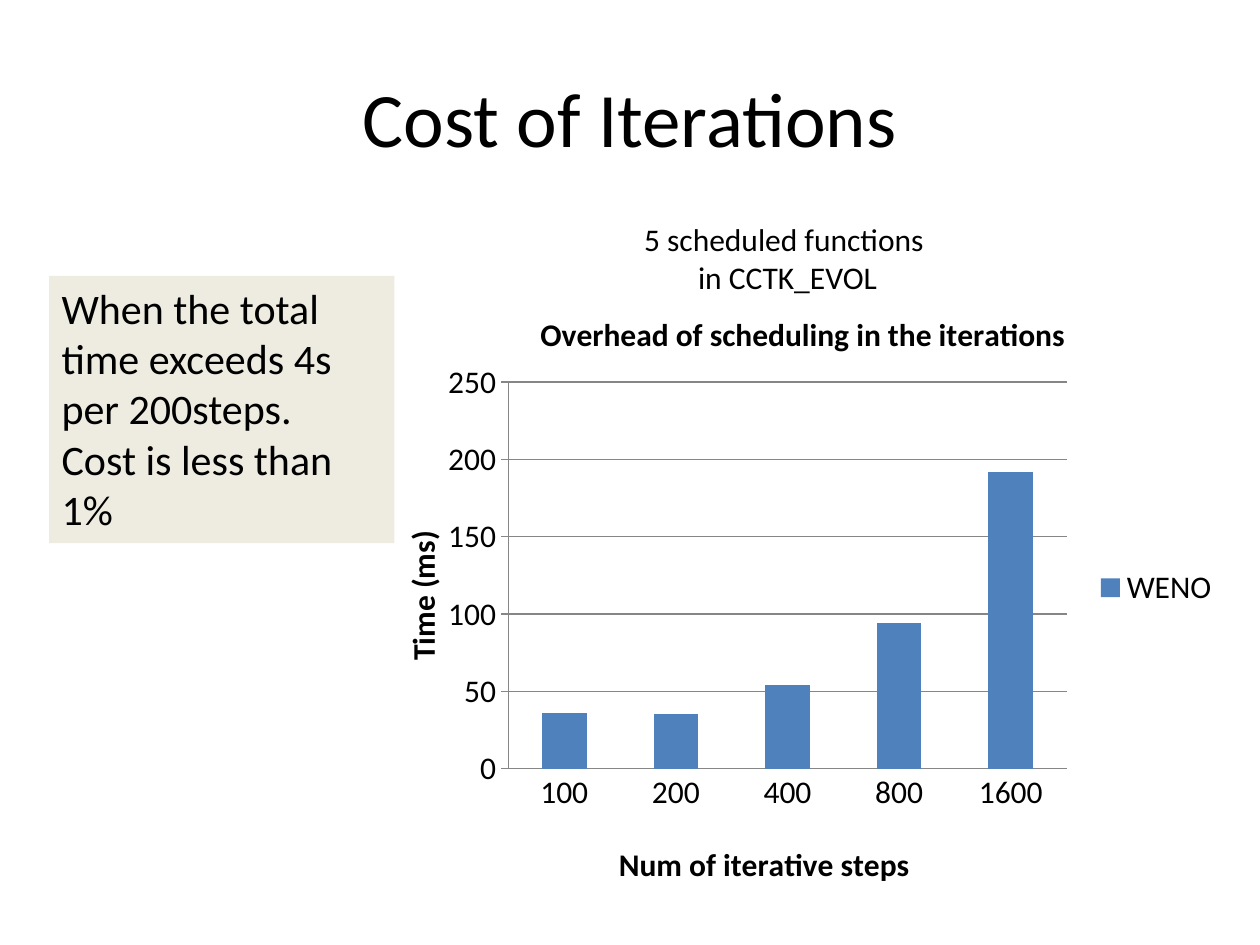
from pptx import Presentation
from pptx.chart.data import CategoryChartData
from pptx.dml.color import RGBColor
from pptx.enum import chart as ec, shapes, text
from pptx.oxml import parse_xml
from pptx.oxml.ns import nsdecls, qn
from pptx.util import Inches, Pt

BLACK = RGBColor(0, 0, 0)
BLUE = RGBColor(0x4F, 0x81, 0xBD)
BEIGE = RGBColor(0xEE, 0xEC, 0xE1)
GRAY = RGBColor(0x86, 0x86, 0x86)


def write(tf, lines, size=18, bold=False, align=None):
    for i, line in enumerate(lines):
        p = tf.paragraphs[0] if i == 0 else tf.add_paragraph()
        p.alignment = align
        r = p.add_run()
        r.text = line
        r.font.name = "Calibri"
        r.font.size = Pt(size)
        r.font.bold = bold
        r.font.color.rgb = BLACK


def place(parent, index, target="", **values):
    for old in parent.findall(qn("c:layout")):
        parent.remove(old)
    modes = "".join(f'<c:{k}Mode val="edge"/>' for k in ("x", "y"))
    sizes = "".join(f'<c:{k} val="{v}"/>' for k, v in values.items())
    parent.insert(index, parse_xml(
        f'<c:layout {nsdecls("c")}><c:manualLayout>{target}{modes}{sizes}'
        '</c:manualLayout></c:layout>'))


prs = Presentation()
prs.slide_width, prs.slide_height = Inches(10), Inches(7.5)
s = prs.slides.add_slide(prs.slide_layouts[5])

title = s.shapes.title
title.left, title.top = Inches(0.5), Inches(0.3)
title.width, title.height = Inches(9), Inches(1.25)
title.text_frame.vertical_anchor = text.MSO_ANCHOR.MIDDLE
write(title.text_frame, ["Cost of Iterations"], size=44, align=text.PP_ALIGN.CENTER)

data = CategoryChartData()
data.categories = ["100", "200", "400", "800", "1600"]
data.add_series("WENO", [36, 35, 54, 94, 192])
chart = s.shapes.add_chart(ec.XL_CHART_TYPE.COLUMN_CLUSTERED, Inches(2.86), Inches(2.19),
                           Inches(6.92), Inches(4.95), data).chart
chart.font.name = "Calibri"
chart.font.size = Pt(18)
chart.font.color.rgb = BLACK
chart.has_title = True
chart.has_legend = True
chart.legend.position = ec.XL_LEGEND_POSITION.RIGHT
chart.legend.include_in_layout = False

plot = chart.plots[0]
plot.gap_width = 150
plot.vary_by_categories = False
fill = plot.series[0].format.fill
fill.solid()
fill.fore_color.rgb = BLUE

cat, val = chart.category_axis, chart.value_axis
cat.major_tick_mark = ec.XL_TICK_MARK.NONE
val.major_tick_mark = ec.XL_TICK_MARK.OUTSIDE
val.minimum_scale, val.maximum_scale, val.major_unit = 0, 250, 50
val.has_major_gridlines = True
for line in (cat.format.line, val.format.line, val.major_gridlines.format.line):
    line.color.rgb = GRAY
    line.width = Pt(0.75)

for heading, label, x, y in [
    (chart.chart_title, "Overhead of scheduling in the iterations", 0.2, 0.05),
    (cat.axis_title, "Num of iterative steps", 0.29, 0.9),
    (val.axis_title, "Time (ms)", 0.04, 0.4),
]:
    write(heading.text_frame, [label], bold=True)
    place(heading._element, 1, x=x, y=y)
val.axis_title.text_frame._txBody.bodyPr.set("rot", "-5400000")
val.axis_title.text_frame._txBody.bodyPr.set("vert", "horz")
place(chart._chartSpace.chart.plotArea, 0, '<c:layoutTarget val="inner"/>',
      x=0.17, y=0.17, w=0.64, h=0.62)

tb = s.shapes.add_textbox(Inches(4.46), Inches(1.42), Inches(3.58), Inches(1.25))
tf = tb.text_frame
tf.word_wrap = True
tf.vertical_anchor = text.MSO_ANCHOR.MIDDLE
write(tf, ["5 scheduled functions ", "in CCTK_EVOL"], align=text.PP_ALIGN.CENTER)

sp = s.shapes.add_shape(shapes.MSO_SHAPE.RECTANGLE, Inches(0.39), Inches(2.19),
                        Inches(2.74), Inches(2.12))
sp.shadow.inherit = False
sp.fill.solid()
sp.fill.fore_color.rgb = BEIGE
sp.line.fill.background()
tf = sp.text_frame
tf.word_wrap = True
tf.auto_size = text.MSO_AUTO_SIZE.SHAPE_TO_FIT_TEXT
tf.vertical_anchor = text.MSO_ANCHOR.TOP
write(tf, ["When the total time exceeds 4s per 200steps.", "Cost is less than 1%"],
      size=24, align=text.PP_ALIGN.LEFT)

prs.save("out.pptx")
